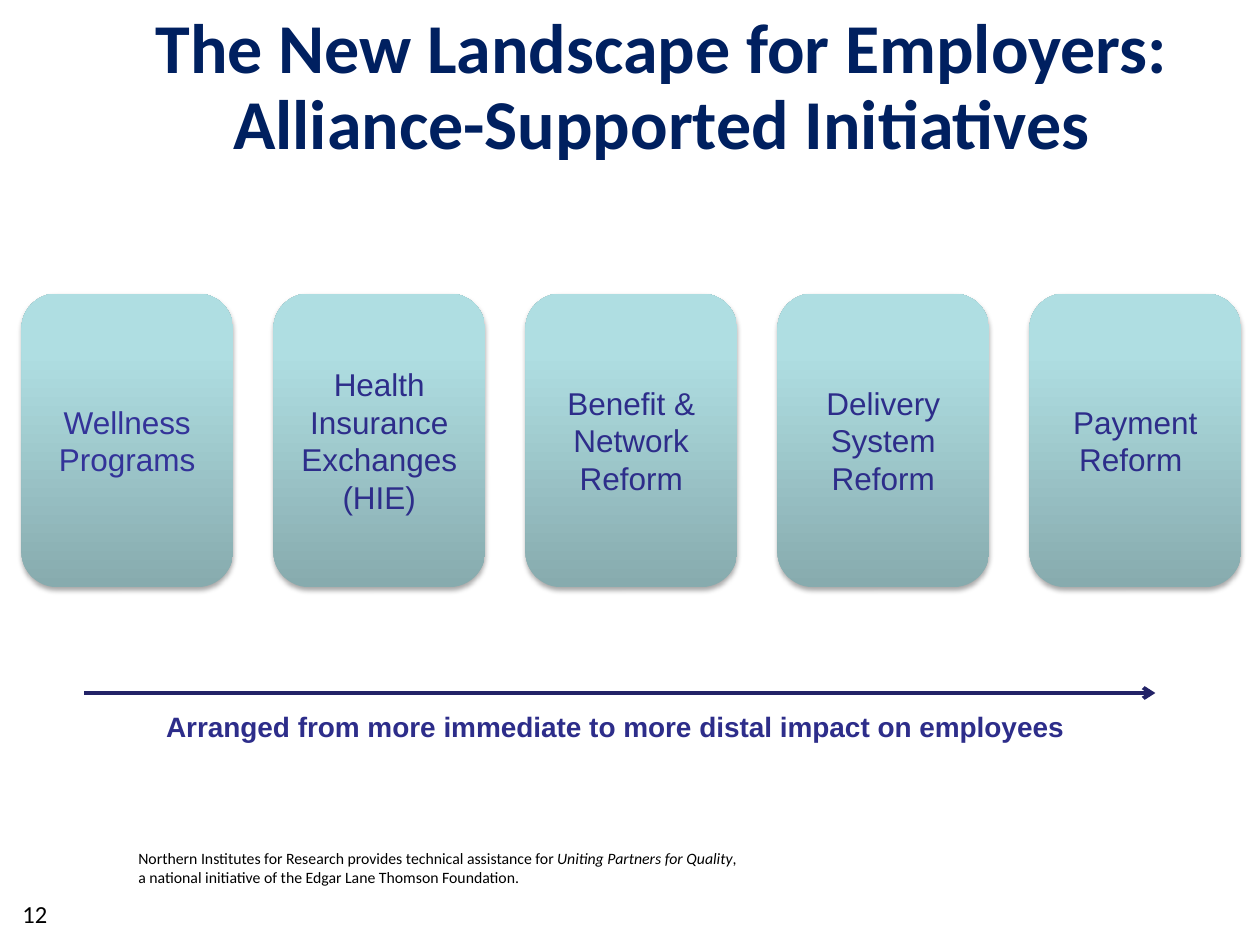
import dataclasses

import lxml.etree
import pptx
import pptx.dml.color
import pptx.enum.shapes
import pptx.enum.text
import pptx.oxml
import pptx.oxml.ns
import pptx.util

ALIGN = pptx.enum.text.PP_ALIGN
ANCHOR = pptx.enum.text.MSO_ANCHOR
WIDTH, HEIGHT = 10, 7.5


@dataclasses.dataclass(frozen=True)
class Theme:
    """Colours, fonts and type sizes of the slide."""

    navy: str = "002060"
    indigo: str = "2D2D8A"
    violet: str = "333399"
    arrow: str = "222267"
    black: str = "000000"
    card_stops: tuple = ((0, "87ABAE"), (80, "AFDEE2"), (100, "AFE0E4"))
    heading_font: str = "Calibri"
    card_font: str = "Arial"
    title_size: float = 40
    card_size: float = 18
    caption_size: float = 16
    number_size: float = 14
    credit_size: float = 9


THEME = Theme()


def inches(*lengths):
    """Convert lengths in inches to slide units."""
    return [pptx.util.Inches(length) for length in lengths]


def rgb(value):
    """Return a colour object for a hex value."""
    return pptx.dml.color.RGBColor.from_string(value)


def write_text(holder, paragraphs, *, size, color, font=THEME.card_font, bold=False,
               align=ALIGN.LEFT, anchor=ANCHOR.BOTTOM, spacing=None):
    """Fill a shape with paragraphs, each a list of (text, italic) runs."""
    frame = holder.text_frame
    frame.word_wrap = True
    frame.auto_size = pptx.enum.text.MSO_AUTO_SIZE.NONE
    frame.vertical_anchor = anchor
    for index, runs in enumerate(paragraphs):
        paragraph = frame.add_paragraph() if index else frame.paragraphs[0]
        paragraph.alignment = align
        paragraph.line_spacing = spacing
        for text, italic in runs:
            for line_index, line in enumerate(text.split("\n")):
                if line_index:
                    paragraph.add_line_break()
                run = paragraph.add_run()
                run.text = line
                run.font.name = font
                run.font.size = pptx.util.Pt(size)
                run.font.color.rgb = rgb(color)
                run.font.bold = bold
                run.font.italic = italic


def add_text(slide, box, paragraphs, **style):
    """Add a text box."""
    write_text(slide.shapes.add_textbox(*inches(*box)), paragraphs, **style)


def append_xml(shape, markup):
    """Append a drawing element to the shape properties."""
    namespace = pptx.oxml.ns.nsdecls("a")
    element = pptx.oxml.parse_xml(f"<a:root {namespace}>{markup}</a:root>")[0]
    shape._element.spPr.append(element)


def add_card(slide, box, lines, color):
    """Add a rounded card with a vertical gradient and a soft shadow."""
    card = slide.shapes.add_shape(
        pptx.enum.shapes.MSO_SHAPE.ROUNDED_RECTANGLE, *inches(*box))
    stops = "".join(
        f'<a:gs pos="{position * 1000}"><a:srgbClr val="{value}"/></a:gs>'
        for position, value in THEME.card_stops)
    append_xml(card, f'<a:gradFill rotWithShape="1"><a:gsLst>{stops}</a:gsLst>'
                     '<a:lin ang="16200000" scaled="0"/></a:gradFill>')
    card.line.fill.background()
    append_xml(card, '<a:effectLst><a:outerShdw blurRad="39370" dist="22860" '
                     'dir="5400000" rotWithShape="0"><a:srgbClr val="000000">'
                     '<a:alpha val="35000"/></a:srgbClr></a:outerShdw></a:effectLst>')
    write_text(card, [[(line, False)] for line in lines], size=THEME.card_size,
               color=color, align=ALIGN.CENTER, anchor=ANCHOR.MIDDLE)


def add_cards(slide, initiatives):
    """Lay the initiatives out in equal columns."""
    column = WIDTH / len(initiatives)
    for index, (lines, color) in enumerate(initiatives):
        box = (0.17 + index * column, 2.33, 0.84 * column, 2.33)
        add_card(slide, box, lines, color)


def add_arrow(slide, start, end):
    """Add a straight arrow between two points."""
    arrow = slide.shapes.add_connector(
        pptx.enum.shapes.MSO_CONNECTOR.STRAIGHT, *inches(*start, *end))
    arrow.line.color.rgb = rgb(THEME.arrow)
    arrow.line.width = pptx.util.Pt(2.25)
    lxml.etree.SubElement(
        arrow.line._get_or_add_ln(), pptx.oxml.ns.qn("a:tailEnd"), type="arrow")
    append_xml(arrow, "<a:effectLst/>")


def add_title(slide, box, text):
    """Place and format the title placeholder."""
    title = slide.shapes.title
    title.left, title.top, title.width, title.height = inches(*box)
    write_text(title, [[(text, False)]], size=THEME.title_size, color=THEME.navy,
               font=THEME.heading_font, bold=True, align=ALIGN.CENTER,
               anchor=ANCHOR.MIDDLE, spacing=0.9)


def main():
    """Build and save the slide."""
    deck = pptx.Presentation()
    deck.slide_width, deck.slide_height = inches(WIDTH, HEIGHT)
    slide = deck.slides.add_slide(deck.slide_layouts.get_by_name("Title Only"))
    add_title(slide, (0.5, 0.08, 9.5, 1.25),
              "The New Landscape for Employers:\nAlliance-Supported Initiatives")
    add_cards(slide, [
        (["Wellness Programs"], THEME.violet),
        (["Health Insurance Exchanges", "(HIE)"], THEME.indigo),
        (["Benefit & Network Reform"], THEME.indigo),
        (["Delivery System Reform"], THEME.indigo),
        (["Payment Reform "], THEME.indigo),
    ])
    add_arrow(slide, (0.67, 5.5), (9.17, 5.5))
    add_text(slide, (1.08, 5.58, 7.67, 0.37),
             [[("Arranged from more immediate to more distal impact on employees ",
                False)]],
             size=THEME.caption_size, color=THEME.indigo, bold=True, align=ALIGN.CENTER)
    add_text(slide, (1, 6.69, 5.33, 0.4),
             [[("Northern Institutes for Research provides technical assistance for ",
                False),
               ("Uniting Partners for Quality", True),
               (", \na national initiative of the Edgar Lane Thomson Foundation.",
                False)]],
             size=THEME.credit_size, color=THEME.black, font=THEME.heading_font)
    add_text(slide, (0.08, 6.92, 0.58, 0.5), [[("12", False)]],
             size=THEME.number_size, color=THEME.black, font=THEME.heading_font)
    deck.save("out.pptx")


if __name__ == "__main__":
    main()
